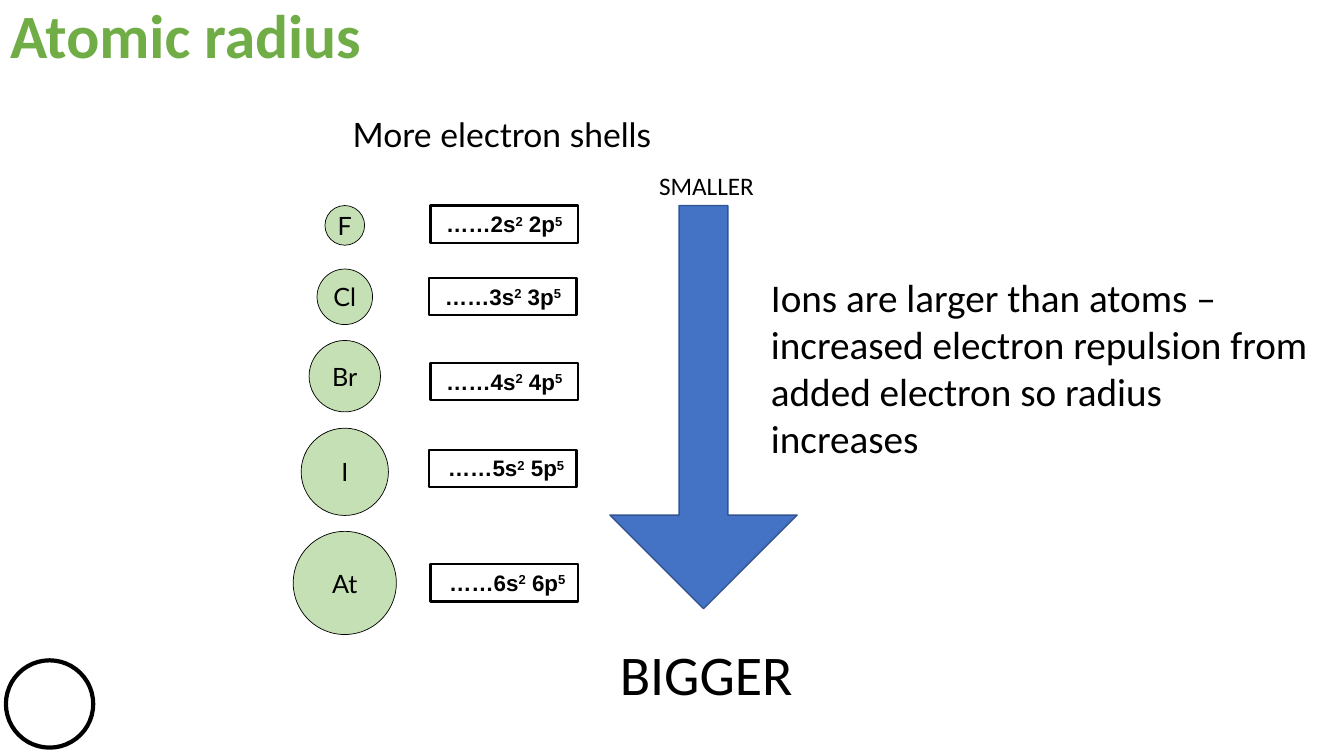
from dataclasses import dataclass

from pptx import Presentation
from pptx.dml.color import RGBColor
from pptx.enum.shapes import MSO_SHAPE
from pptx.enum.text import MSO_ANCHOR, MSO_AUTO_SIZE, PP_ALIGN
from pptx.shapes.autoshape import Shape
from pptx.slide import Slide
from pptx.text.text import Font
from pptx.util import Cm, Pt

ELLIPSE, RECTANGLE, DOWN_ARROW = MSO_SHAPE.OVAL, MSO_SHAPE.RECTANGLE, MSO_SHAPE.DOWN_ARROW
LEFT, CENTER = PP_ALIGN.LEFT, PP_ALIGN.CENTER
TOP, MIDDLE = MSO_ANCHOR.TOP, MSO_ANCHOR.MIDDLE
FIXED, GROW = MSO_AUTO_SIZE.NONE, MSO_AUTO_SIZE.SHAPE_TO_FIT_TEXT

BLACK, WHITE = "000000", "FFFFFF"
TITLE_GREEN, ATOM_GREEN = "70AD47", "C5E0B4"
ARROW_BLUE, ARROW_EDGE = "4472C4", "325491"
ATOM_CENTER_X = 8.69


@dataclass(frozen=True)
class Box:
    """Position and size in centimetres."""
    left: float
    top: float
    width: float
    height: float


@dataclass(frozen=True)
class Halogen:
    symbol: str
    diameter: float
    top: float
    shell: int
    shell_left: float
    shell_top: float
    lead: str = "……"


@dataclass(frozen=True)
class Label:
    text: str
    box: Box
    size: float
    font: str = "Calibri"
    space_after: float = 0


HALOGENS = [
    Halogen("F", 1.0, 5.18, 2, 10.85, 5.18),
    Halogen("Cl", 1.4, 6.78, 3, 10.82, 7.01),
    Halogen("Br", 1.8, 8.58, 4, 10.85, 9.14),
    Halogen("I", 2.2, 10.79, 5, 10.82, 11.33, " ……"),
    Halogen("At", 2.6, 13.39, 6, 10.85, 14.22, " ……"),
]

LABELS = [
    Label("More electron shells", Box(8.64, 2.74, 10.77, 1.27), 24, "Lato", 10),
    Label("SMALLER", Box(16.36, 4.17, 8.1, 1.02), 18),
    Label("BIGGER", Box(15.37, 15.98, 8.1, 1.96), 40),
    Label("Ions are larger than atoms – increased electron repulsion from "
          "added electron so radius increases", Box(19.18, 6.75, 14.1, 5.06), 28),
]


def color(value: str) -> RGBColor:
    return RGBColor.from_string(value)


def style(font: Font, name: str, size: float, tint: str = BLACK, bold: bool = False) -> None:
    font.name, font.size, font.bold = name, Pt(size), bold
    font.color.rgb = color(tint)


def lengths(box: Box) -> tuple[Cm, Cm, Cm, Cm]:
    return Cm(box.left), Cm(box.top), Cm(box.width), Cm(box.height)


def add_figure(slide: Slide, kind: MSO_SHAPE, box: Box, fill: str, edge: str,
               edge_width: float) -> Shape:
    figure = slide.shapes.add_shape(kind, *lengths(box))
    figure.shadow.inherit = False
    figure.fill.solid()
    figure.fill.fore_color.rgb = color(fill)
    figure.line.color.rgb = color(edge)
    figure.line.width = Pt(edge_width)
    return figure


def add_label(slide: Slide, label: Label) -> None:
    frame = slide.shapes.add_textbox(*lengths(label.box)).text_frame
    frame.word_wrap = True
    frame.auto_size = GROW
    frame.text = label.text
    paragraph = frame.paragraphs[0]
    paragraph.space_after = Pt(label.space_after)
    style(paragraph.runs[0].font, label.font, label.size)


def add_atom(slide: Slide, halogen: Halogen) -> None:
    size = halogen.diameter
    box = Box(ATOM_CENTER_X - size / 2, halogen.top, size, size)
    frame = add_figure(slide, ELLIPSE, box, ATOM_GREEN, BLACK, 0.5).text_frame
    frame.margin_left = frame.margin_top = frame.margin_right = frame.margin_bottom = 0
    frame.vertical_anchor = MIDDLE
    frame.text = halogen.symbol
    frame.paragraphs[0].alignment = CENTER
    style(frame.paragraphs[0].runs[0].font, "Lato", 18)


def add_outer_shell(slide: Slide, halogen: Halogen) -> None:
    """Draw the boxed s and p configuration with raised electron counts."""
    box = Box(halogen.shell_left, halogen.shell_top, 3.71, 0.94)
    frame = add_figure(slide, RECTANGLE, box, WHITE, BLACK, 1.5).text_frame
    frame.word_wrap = True
    frame.auto_size = GROW
    frame.vertical_anchor = TOP
    paragraph = frame.paragraphs[0]
    paragraph.alignment = CENTER
    subshells = ((f"{halogen.lead}{halogen.shell}s", "2"), (f" {halogen.shell}p", "5"))
    for subshell, electrons in subshells:
        for text, baseline in ((subshell, "0"), (electrons, "30000")):
            run = paragraph.add_run()
            run.text = text
            style(run.font, "Arial", 16, bold=True)
            run._r.get_or_add_rPr().set("baseline", baseline)


def set_title(slide: Slide, text: str) -> None:
    title = slide.shapes.title
    title.left, title.top, title.width, title.height = lengths(Box(0, 0, 31.55, 3.68))
    frame = title.text_frame
    frame.auto_size = FIXED
    frame.vertical_anchor = TOP
    frame.text = text
    paragraph = frame.paragraphs[0]
    paragraph.alignment = LEFT
    paragraph.line_spacing = 0.9
    style(paragraph.runs[0].font, "Calibri", 44, TITLE_GREEN, bold=True)


def main() -> None:
    deck = Presentation()
    deck.slide_width, deck.slide_height = Cm(33.87), Cm(19.05)
    slide = deck.slides.add_slide(deck.slide_layouts[5])

    set_title(slide, "Atomic radius")
    add_figure(slide, ELLIPSE, Box(0.15, 16.64, 2.2, 2.2), WHITE, BLACK, 3)
    for halogen in HALOGENS:
        add_atom(slide, halogen)
        add_outer_shell(slide, halogen)

    size_arrow = add_figure(slide, DOWN_ARROW, Box(15.37, 5.18, 4.72, 10.16),
                            ARROW_BLUE, ARROW_EDGE, 1)
    size_arrow.adjustments[0] = 0.26
    size_arrow.adjustments[1] = 0.5
    for label in LABELS:
        add_label(slide, label)

    deck.save("out.pptx")


if __name__ == "__main__":
    main()
